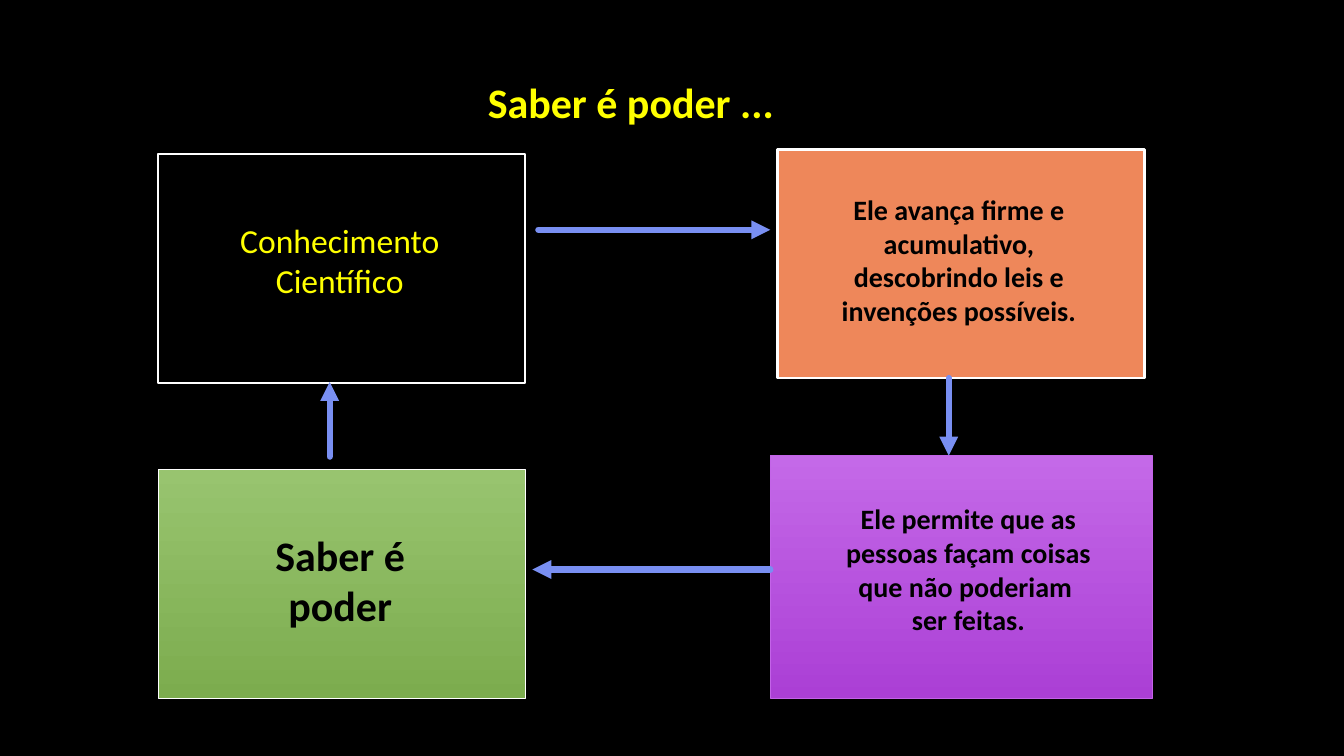
from dataclasses import dataclass

from lxml import etree
from pptx import Presentation
from pptx import util as u
from pptx.dml.color import RGBColor
from pptx.enum import shapes, text
from pptx.oxml import ns
from pptx.slide import Slide


@dataclass(frozen=True)
class Theme:
    background: str = "000000"
    accent: str = "FFFF00"
    ink: str = "000000"
    outline: str = "FFFFFF"
    orange: str = "EE875A"
    green: tuple[str, str] = ("98C46F", "7CAC4E")
    purple: tuple[str, str] = ("C469E8", "AB3FD5")
    purple_outline: str = "C363E8"
    arrow: str = "798FF2"
    font: str = "Calibri"
    heading_size: int = 30
    concept_size: int = 24
    body_size: int = 20
    arrow_width: float = 4.5


THEME = Theme()


@dataclass(frozen=True)
class Area:
    left: float
    top: float
    width: float
    height: float

    def lengths(self) -> list[u.Length]:
        return [u.Inches(v) for v in (self.left, self.top, self.width, self.height)]


@dataclass(frozen=True)
class Panel:
    area: Area
    fill: tuple[str, ...]  # one colour is solid, two run from top to bottom
    outline: str
    outline_width: float


@dataclass(frozen=True)
class Label:
    area: Area
    paragraphs: tuple[str, ...]
    size: int
    color: str = THEME.ink
    bold: bool = True
    wrap: bool = True


@dataclass(frozen=True)
class Arrow:
    start: tuple[float, float]
    end: tuple[float, float]


PANELS = [
    Panel(Area(1.57, 1.53, 3.64, 2.27), (THEME.background,), THEME.outline, 1.5),
    Panel(Area(1.57, 4.66, 3.64, 2.27), THEME.green, THEME.outline, 0.75),
    Panel(Area(7.71, 1.48, 3.64, 2.27), (THEME.orange,), THEME.outline, 2),
    Panel(Area(7.64, 4.52, 3.79, 2.41), THEME.purple, THEME.purple_outline, 0.75),
]

# Clockwise cycle between the four panels
ARROWS = [
    Arrow((5.34, 2.28), (7.64, 2.28)),
    Arrow((9.41, 3.75), (9.41, 4.52)),
    Arrow((7.64, 5.65), (5.28, 5.65)),
    Arrow((3.27, 4.53), (3.27, 3.79)),
]

LABELS = [
    Label(Area(4.74, 0.71, 3.16, 0.61), ("Saber é poder ...",),
          THEME.heading_size, THEME.accent, wrap=False),
    Label(Area(1.93, 2.13, 2.88, 0.91), ("Conhecimento Científico",),
          THEME.concept_size, THEME.accent, bold=False),
    Label(Area(2.36, 5.2, 2.03, 1.11), ("Saber é poder",), THEME.heading_size),
    Label(Area(8.08, 4.93, 3.05, 1.45),
          ("Ele permite que as pessoas façam coisas que não poderiam ", "ser feitas."),
          THEME.body_size),
    Label(Area(8.05, 1.86, 2.92, 1.45),
          ("Ele avança firme e acumulativo, descobrindo leis e invenções possíveis.",),
          THEME.body_size),
]


def draw_panel(slide: Slide, panel: Panel) -> None:
    box = slide.shapes.add_shape(shapes.MSO_SHAPE.RECTANGLE, *panel.area.lengths())
    box.shadow.inherit = False
    if len(panel.fill) == 1:
        box.fill.solid()
        box.fill.fore_color.rgb = RGBColor.from_string(panel.fill[0])
    else:
        box.fill.gradient()
        box.fill.gradient_angle = 270
        for stop, color in zip(box.fill.gradient_stops, panel.fill):
            stop.color.rgb = RGBColor.from_string(color)
    box.line.color.rgb = RGBColor.from_string(panel.outline)
    box.line.width = u.Pt(panel.outline_width)


def draw_arrow(slide: Slide, arrow: Arrow) -> None:
    ends = [u.Inches(v) for v in arrow.start + arrow.end]
    link = slide.shapes.add_connector(shapes.MSO_CONNECTOR.STRAIGHT, *ends)
    link.line.color.rgb = RGBColor.from_string(THEME.arrow)
    link.line.width = u.Pt(THEME.arrow_width)
    # Round start, triangular head, no shadow
    stroke = link.line._get_or_add_ln()
    stroke.set("cap", "rnd")
    etree.SubElement(stroke, ns.qn("a:round"))
    etree.SubElement(stroke, ns.qn("a:tailEnd"), type="triangle")
    etree.SubElement(link._element.spPr, ns.qn("a:effectLst"))


def draw_label(slide: Slide, label: Label) -> None:
    frame = slide.shapes.add_textbox(*label.area.lengths()).text_frame
    frame.word_wrap = label.wrap
    frame.auto_size = text.MSO_AUTO_SIZE.SHAPE_TO_FIT_TEXT
    frame.text = "\n".join(label.paragraphs)
    font_format = {"name": THEME.font, "size": u.Pt(label.size), "bold": label.bold}
    for paragraph in frame.paragraphs:
        if label.wrap:
            paragraph.alignment = text.PP_ALIGN.CENTER
        font = paragraph.runs[0].font
        for attribute, value in font_format.items():
            setattr(font, attribute, value)
        font.color.rgb = RGBColor.from_string(label.color)


def main() -> None:
    deck = Presentation()
    deck.slide_width, deck.slide_height = u.Inches(13.33), u.Inches(7.5)
    slide = deck.slides.add_slide(deck.slide_layouts[6])
    slide.background.fill.solid()
    slide.background.fill.fore_color.rgb = RGBColor.from_string(THEME.background)

    # Panels at the back, then the cycle arrows, then the wording
    for panel in PANELS:
        draw_panel(slide, panel)
    for arrow in ARROWS:
        draw_arrow(slide, arrow)
    for label in LABELS:
        draw_label(slide, label)
    deck.save("out.pptx")


if __name__ == "__main__":
    main()
